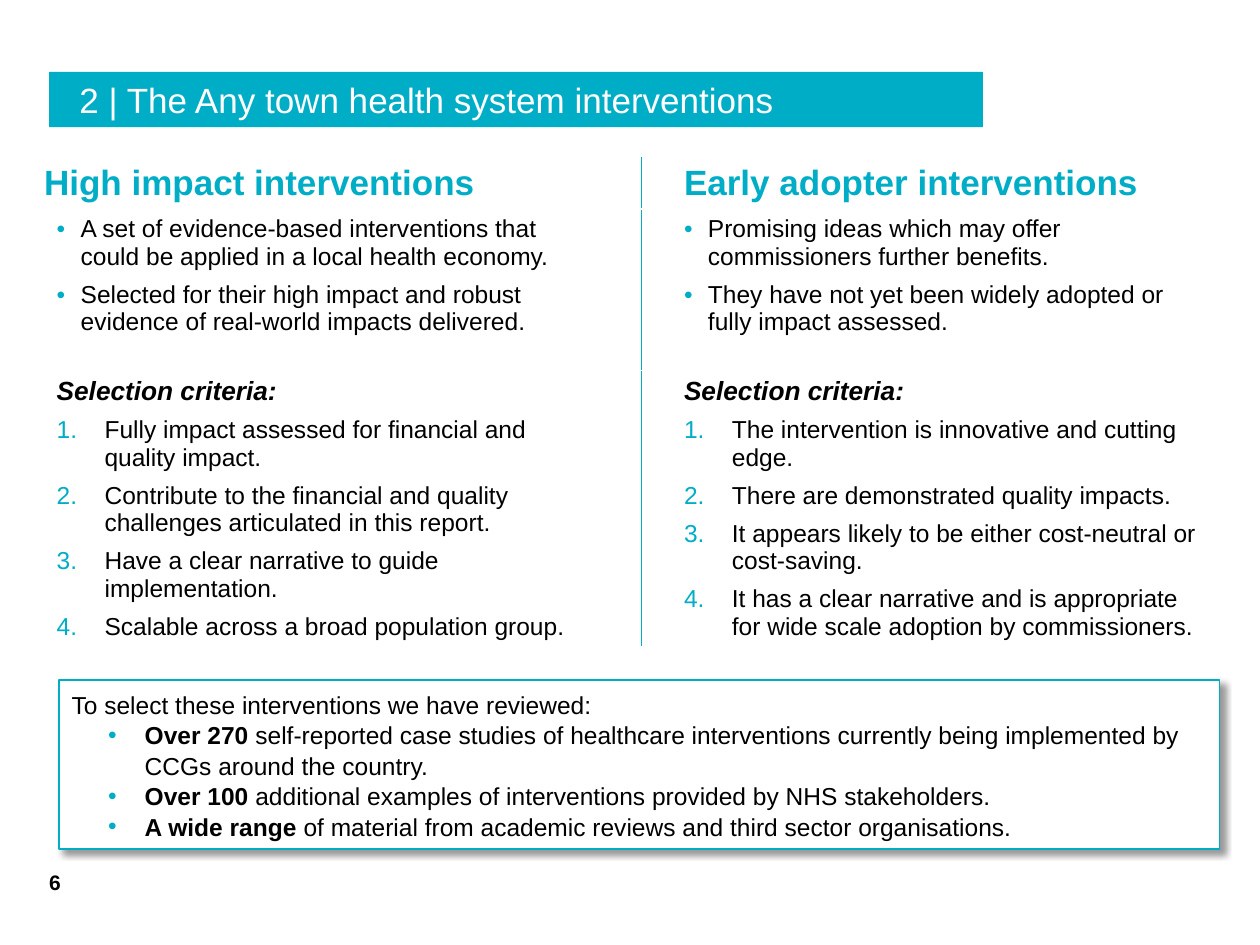
from lxml import etree
from pptx import Presentation
from pptx.dml.color import RGBColor
from pptx.enum.shapes import MSO_SHAPE
from pptx.enum.text import MSO_ANCHOR, MSO_AUTO_SIZE, PP_ALIGN
from pptx.oxml import parse_xml
from pptx.oxml.ns import nsdecls, qn
from pptx.util import Inches, Pt

RECTANGLE = MSO_SHAPE.RECTANGLE
MIDDLE, BOTTOM = MSO_ANCHOR.MIDDLE, MSO_ANCHOR.BOTTOM
LEFT = PP_ALIGN.LEFT
TEAL = RGBColor(0x00, 0xAD, 0xC6)
BLACK = RGBColor(0x00, 0x00, 0x00)
WHITE = RGBColor(0xFF, 0xFF, 0xFF)
FONT = "Arial"

presentation = Presentation()
presentation.slide_width, presentation.slide_height = Inches(10), Inches(7.5)
slide = presentation.slides.add_slide(presentation.slide_layouts[5])

# Grid of 100 columns by 75 rows
COLUMN = presentation.slide_width // 100
ROW = presentation.slide_height // 75


def add_marker(paragraph, margin, hanging, numbered=False):
    """Give a paragraph a teal bullet or number with a hanging indent."""
    properties = paragraph._p.get_or_add_pPr()
    properties.set("marL", str(int(margin * COLUMN)))
    properties.set("indent", str(int(-hanging * COLUMN)))
    color = etree.SubElement(properties, qn("a:buClr"))
    etree.SubElement(color, qn("a:srgbClr"), val=str(TEAL))
    etree.SubElement(properties, qn("a:buFont"), typeface=FONT)
    if numbered:
        etree.SubElement(properties, qn("a:buAutoNum"), type="arabicPeriod")
    else:
        etree.SubElement(properties, qn("a:buChar"), char="•")


def format_runs(paragraph, size, color=BLACK, bold=False, italic=False):
    paragraph.alignment = LEFT
    for run in paragraph.runs:
        font = run.font
        font.name, font.size, font.bold, font.italic = FONT, Pt(size), bold, italic
        font.color.rgb = color


# Title bar
title = slide.shapes.title
title.left, title.top = int(3.9 * COLUMN), int(5.7 * ROW)
title.width, title.height = int(74.1 * COLUMN), int(4.4 * ROW)
title.fill.solid()
title.fill.fore_color.rgb = TEAL
frame = title.text_frame
frame.text = "2 | The Any town health system interventions"
frame.auto_size = MSO_AUTO_SIZE.NONE
frame.vertical_anchor = MIDDLE
frame.margin_left = int(2.4 * COLUMN)
frame.margin_right = frame.margin_top = frame.margin_bottom = 0
format_runs(frame.paragraphs[0], 20, WHITE)

# Comparison table: table column -> heading, bullets, criteria
interventions = {
    0: ("High impact interventions",
        ["A set of evidence-based interventions that could be applied in a local health economy.",
         "Selected for their high impact and robust evidence of real-world impacts delivered."],
        ["Fully impact assessed for financial and quality impact.",
         "Contribute to the financial and quality challenges articulated in this report.",
         "Have a clear narrative to guide implementation.",
         "Scalable across a broad population group."]),
    3: ("Early adopter interventions",
        ["Promising ideas which may offer commissioners further benefits.",
         "They have not yet been widely adopted or fully impact assessed."],
        ["The intervention is innovative and cutting edge.",
         "There are demonstrated quality impacts.",
         "It appears likely to be either cost-neutral or cost-saving.",
         "It has a clear narrative and is appropriate for wide scale adoption by commissioners."]),
}
column_widths = [45, 2.3, 2.3, 43.4]
row_heights = [3.9, 12.8, 19.2]
table = slide.shapes.add_table(
    len(row_heights), len(column_widths), int(3.5 * COLUMN), int(12.5 * ROW),
    int(sum(column_widths) * COLUMN), int(sum(row_heights) * ROW)).table
table.first_row = table.horz_banding = False
for column, width in zip(table.columns, column_widths):
    column.width = int(width * COLUMN)
for row, height in zip(table.rows, row_heights):
    row.height = int(height * ROW)
for cell in table.iter_cells():
    cell.fill.background()

for column_index, (heading, bullets, criteria) in interventions.items():
    heading_cell, bullet_cell, criteria_cell = (
        table.cell(row_index, column_index) for row_index in range(3))
    heading_cell.text_frame.text = heading
    format_runs(heading_cell.text_frame.paragraphs[0], 20, TEAL, bold=True)

    bullet_cell.text_frame.text = "\n".join(bullets)
    for paragraph in bullet_cell.text_frame.paragraphs:
        add_marker(paragraph, 1.9, 1.9)
        paragraph.space_after = Pt(6)
        format_runs(paragraph, 14)

    criteria_cell.text_frame.text = "\n".join(["Selection criteria:"] + criteria)
    label, *items = criteria_cell.text_frame.paragraphs
    label.space_after = Pt(6)
    format_runs(label, 15, bold=True, italic=True)
    for paragraph in items:
        add_marker(paragraph, 3.8, 3.8, numbered=True)
        paragraph.space_after = Pt(6)
        format_runs(paragraph, 14)
table.cell(0, 0).margin_left = 0

# Teal divider between the two narrow columns
for row_index in range(len(row_heights)):
    for column_index, side in ((1, "lnR"), (2, "lnL")):
        border = parse_xml(
            f'<a:{side} {nsdecls("a")} w="12700"><a:solidFill>'
            f'<a:srgbClr val="{TEAL}"/></a:solidFill></a:{side}>')
        table.cell(row_index, column_index)._tc.get_or_add_tcPr().insert(0, border)

# Evidence box with a soft shadow
box = slide.shapes.add_shape(RECTANGLE, int(4.7 * COLUMN), 54 * ROW,
                             int(92.1 * COLUMN), int(13.4 * ROW))
box.fill.solid()
box.fill.fore_color.rgb = WHITE
box.line.color.rgb = TEAL
box.line.width = Pt(1)
box.shadow.inherit = False
box._element.spPr.find(qn("a:effectLst")).append(parse_xml(
    f'<a:outerShdw {nsdecls("a")} blurRad="50800" dist="38100" dir="2700000" '
    'algn="tl" rotWithShape="0"><a:srgbClr val="000000">'
    '<a:alpha val="40000"/></a:srgbClr></a:outerShdw>'))
evidence = [
    ("Over 270 ", "self-reported case studies of healthcare interventions currently "
                  "being implemented by CCGs around the country."),
    ("Over 100 ", "additional examples of interventions provided by NHS stakeholders."),
    ("A wide range ", "of material from academic reviews and third sector organisations."),
]
frame = box.text_frame
frame.word_wrap = True
frame.vertical_anchor = MIDDLE
frame.text = "To select these interventions we have reviewed:"
format_runs(frame.paragraphs[0], 14)
for amount, description in evidence:
    paragraph = frame.add_paragraph()
    add_marker(paragraph, 5.8, 2.9)
    paragraph.level = 1
    for text in (amount, description):
        paragraph.add_run().text = text
    format_runs(paragraph, 14)
    paragraph.runs[0].font.bold = True
for paragraph in frame.paragraphs:
    paragraph.line_spacing = 1.04

# Page number
page_number = slide.shapes.add_textbox(int(3.9 * COLUMN), 69 * ROW,
                                       int(3.3 * COLUMN), 2 * ROW)
frame = page_number.text_frame
frame.word_wrap = True
frame.vertical_anchor = BOTTOM
frame.margin_left = frame.margin_right = frame.margin_top = frame.margin_bottom = 0
frame.text = "6"
format_runs(frame.paragraphs[0], 12, bold=True)

presentation.save("out.pptx")
